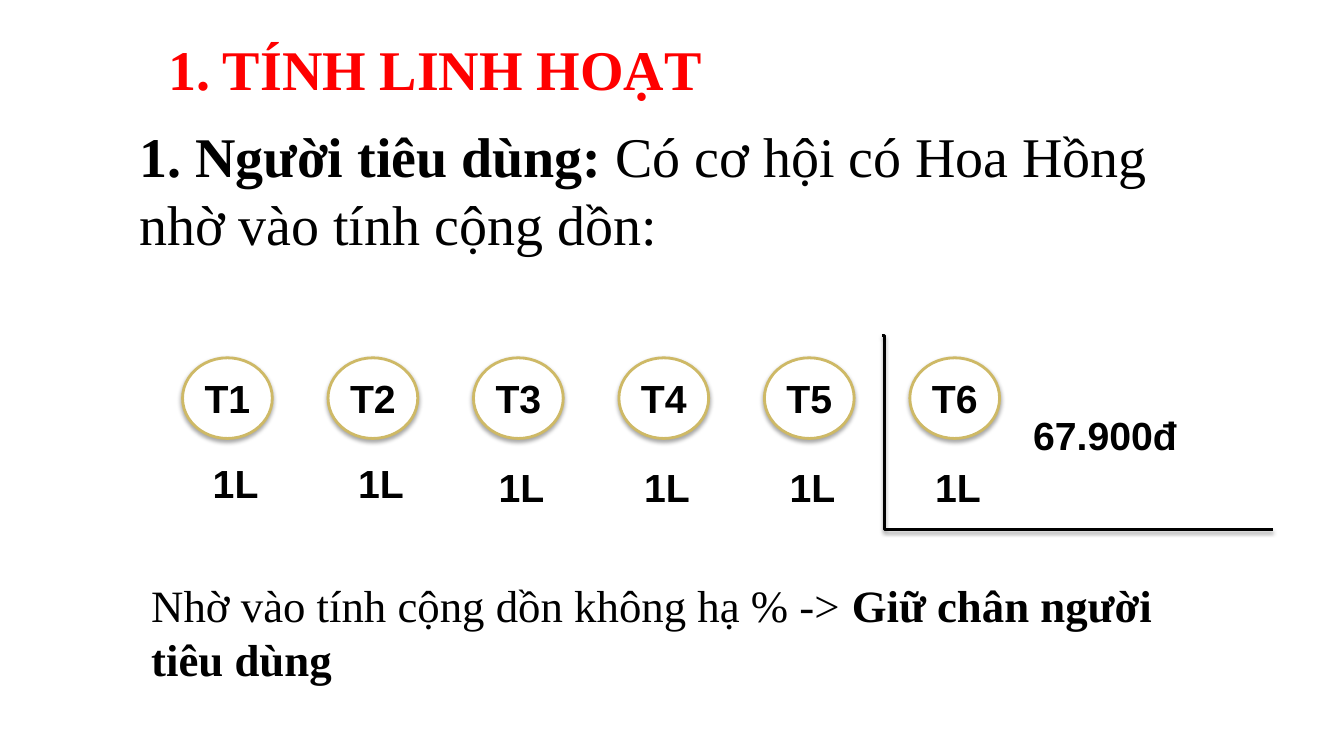
from lxml import etree
from pptx import Presentation
from pptx import util as u
from pptx.dml.color import RGBColor
from pptx.enum import shapes, text
from pptx.oxml.ns import qn

COLORS = {"ink": "000000", "title": "FF0000", "gold": "CEB966", "paper": "FFFFFF"}
SERIF, SANS = "Times New Roman", "Arial"


class Board:
    def __init__(self, page):
        self.page = page

    def color(self, name):
        return RGBColor.from_string(COLORS[name])

    def fill_text(self, box, spans, size, font, color="ink", inset=3.6):
        frame = box.text_frame
        frame.margin_left = frame.margin_right = u.Pt(inset)
        frame.margin_top = frame.margin_bottom = u.Pt(3.6)
        para = frame.paragraphs[0]
        for words, bold in spans:
            span = para.add_run()
            span.text = words
            span.font.size = u.Pt(size)
            span.font.name = font
            span.font.bold = bold
            span.font.color.rgb = self.color(color)
        return para

    def label(self, left, top, width, height, spans, size, font, color="ink", wrap=False, inset=3.6):
        box = self.page.shapes.add_textbox(*map(u.Pt, (left, top, width, height)))
        box.text_frame.word_wrap = wrap
        box.text_frame.auto_size = text.MSO_AUTO_SIZE.SHAPE_TO_FIT_TEXT
        self.fill_text(box, spans, size, font, color, inset)

    def shadow(self, shape, alpha, distance):
        properties = shape._element.spPr
        effects = properties.find(qn("a:effectLst"))
        if effects is None:
            effects = etree.SubElement(properties, qn("a:effectLst"))
        outer = etree.SubElement(effects, qn("a:outerShdw"), blurRad=str(u.Pt(3)),
                                 dist=str(u.Pt(distance)), dir="5400000", rotWithShape="0")
        tint = etree.SubElement(outer, qn("a:srgbClr"), val=COLORS["ink"])
        etree.SubElement(tint, qn("a:alpha"), val=str(alpha * 1000))

    def circle(self, left, top, width, height, words):
        oval = self.page.shapes.add_shape(shapes.MSO_SHAPE.OVAL, *map(u.Pt, (left, top, width, height)))
        oval.fill.solid()
        oval.fill.fore_color.rgb = self.color("paper")
        oval.line.color.rgb = self.color("gold")
        oval.line.width = u.Pt(2)
        oval.shadow.inherit = False
        self.shadow(oval, 35, 1.8)
        oval.text_frame.vertical_anchor = text.MSO_ANCHOR.MIDDLE
        para = self.fill_text(oval, [(words, True)], 28, SANS)
        para.alignment = text.PP_ALIGN.CENTER

    def elbow(self, left, top, right, bottom, bend):
        line = self.page.shapes.add_connector(shapes.MSO_CONNECTOR.ELBOW, *map(u.Pt, (left, top, right, bottom)))
        line.line.color.rgb = self.color("ink")
        line.line.width = u.Pt(2)
        guides = line._element.spPr.find(qn("a:prstGeom")).find(qn("a:avLst"))
        etree.SubElement(guides, qn("a:gd"), name="adj1", fmla=f"val {bend}")
        self.shadow(line, 38, 1.6)


def main():
    deck = Presentation()
    deck.slide_width, deck.slide_height = u.Pt(960), u.Pt(540)
    board = Board(deck.slides.add_slide(deck.slide_layouts[6]))

    board.label(95.8, 83.5, 762.5, 103.7,
                [("1. Người tiêu dùng: ", True), ("Có cơ hội có Hoa Hồng nhờ vào tính cộng dồn:", False)],
                40, SERIF, wrap=True)

    for month in range(6):
        left = 130.4 + 103.9 * month
        board.circle(left, 255.6, 64.1, 57.6, f"T{month + 1}")
        shift, top = (18, 324.7) if month < 2 else (14.4, 327.6)
        board.label(left + shift, top, 40.3, 41, [("1L", True)], 28, SANS)

    board.label(734.4, 290.2, 111.6, 41, [("67.900đ", True)], 28, SANS)
    board.elbow(630, 239.8, 909.4, 378.4, 600)
    board.label(104.4, 409, 762.5, 85,
                [("Nhờ vào tính cộng dồn không hạ % -> ", False), ("Giữ chân người tiêu dùng", True)],
                32, SERIF, wrap=True)
    board.label(113, 20.9, 400.3, 55.4, [("1. TÍNH LINH HOẠT", True)], 40, SERIF, "title", inset=7.2)

    deck.save("out.pptx")


if __name__ == "__main__":
    main()
